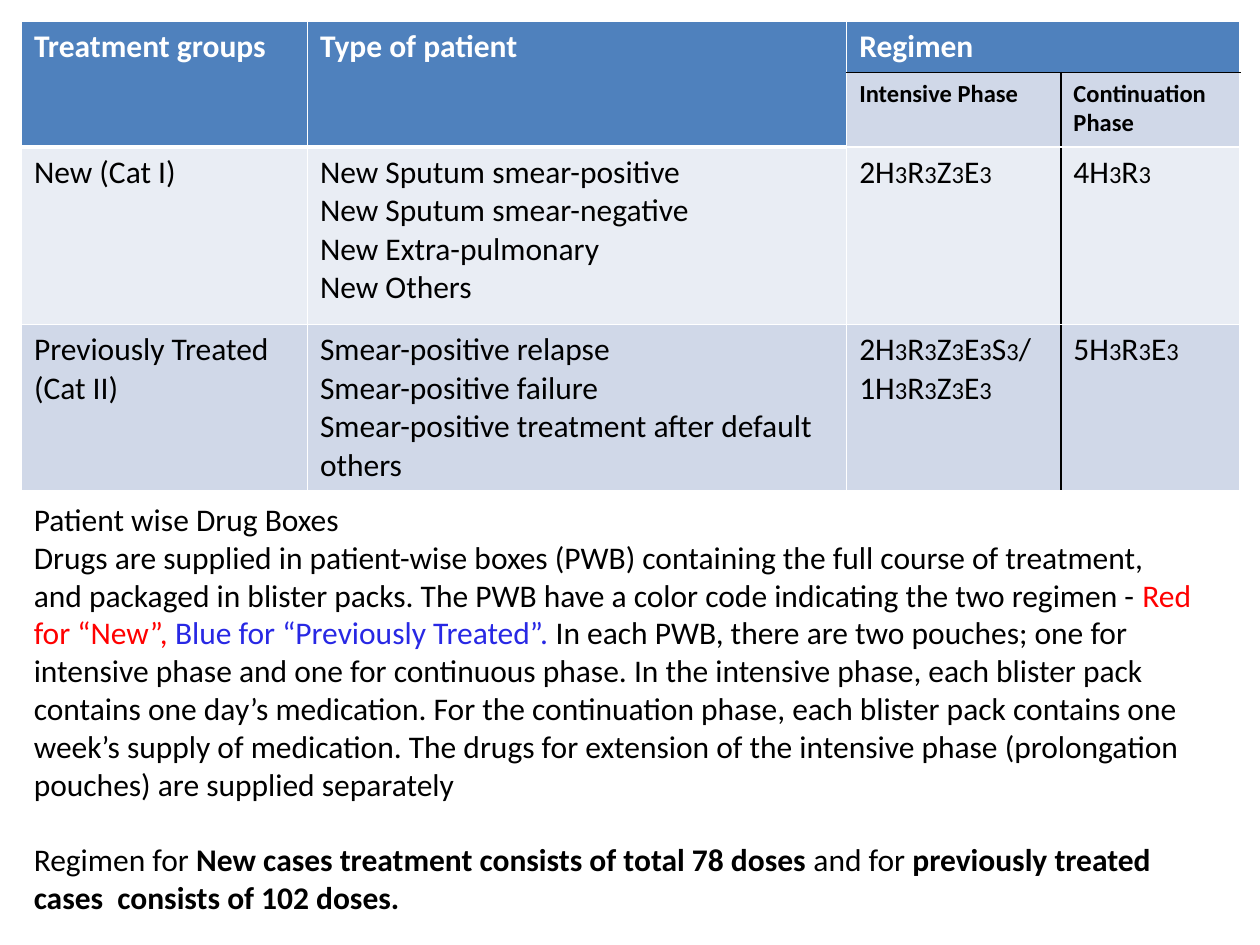
from dataclasses import dataclass
from itertools import groupby

from lxml import etree
from pptx import Presentation
from pptx import util as u
from pptx.dml.color import RGBColor
from pptx.oxml import ns

COLORS = {
    "header": "4F81BD", "band": "D0D8E8", "light": "E9EDF4",
    "white": "FFFFFF", "black": "000000", "red": "FF0000", "blue": "2828E4",
}
FONT = "Calibri"
BODY, SMALL = 18, 14
MARGIN = 0.17
COLUMNS = [2.27, 4.28, 1.70, 1.42]
ROWS = [0.39, 0.59, 1.41, 1.29]


@dataclass
class Entry:
    row: int
    column: int
    lines: list[str]
    fill: str
    color: str = "black"
    size: int = BODY
    bold: bool = False
    row_span: int = 1
    column_span: int = 1
    formula: bool = False


@dataclass
class Span:
    words: str
    color: str = "black"
    bold: bool = False


HEADING = {"fill": "header", "color": "white", "bold": True}
PHASE = {"fill": "band", "size": SMALL, "bold": True}
ENTRIES = [
    Entry(0, 0, ["Treatment groups"], row_span=2, **HEADING),
    Entry(0, 1, ["Type of patient"], row_span=2, **HEADING),
    Entry(0, 2, ["Regimen"], column_span=2, **HEADING),
    Entry(1, 2, ["Intensive Phase"], **PHASE),
    Entry(1, 3, ["Continuation", "Phase"], **PHASE),
    Entry(2, 0, ["New (Cat I)"], "light"),
    Entry(2, 1, ["New Sputum smear-positive", "New Sputum smear-negative",
                 "New Extra-pulmonary", "New Others"], "light"),
    Entry(2, 2, ["2H3R3Z3E3"], "light", formula=True),
    Entry(2, 3, ["4H3R3"], "light", formula=True),
    Entry(3, 0, ["Previously Treated (Cat II)"], "band"),
    Entry(3, 1, ["Smear-positive relapse", "Smear-positive failure",
                 "Smear-positive treatment after default", "others"], "band"),
    Entry(3, 2, ["2H3R3Z3E3S3/", "1H3R3Z3E3"], "band", formula=True),
    Entry(3, 3, ["5H3R3E3"], "band", formula=True),
]
DRUG_BOXES = [
    [Span("Patient wise Drug Boxes")],
    [Span("Drugs are supplied in patient-wise boxes (PWB) containing the full course of treatment,")],
    [Span("and packaged in blister packs. The PWB have a color code indicating the two regimen - "),
     Span("Red", "red")],
    [Span("for “New”, ", "red"), Span("Blue for “Previously Treated”. ", "blue"),
     Span("In each PWB, there are two pouches; one for")],
    [Span("intensive phase and one for continuous phase. In the intensive phase, each blister pack")],
    [Span("contains one day’s medication. For the continuation phase, each blister pack contains one")],
    [Span("week’s supply of medication. The drugs for extension of the intensive phase (prolongation")],
    [Span("pouches) are supplied separately")],
    [Span("Regimen for "), Span("New cases treatment consists of total 78 doses ", bold=True),
     Span("and for "), Span("previously treated cases  consists of 102 doses.", bold=True)],
]


def rgb(name: str) -> RGBColor:
    return RGBColor.from_string(COLORS[name])


def style(font, color: str, size: int, bold: bool) -> None:
    font.name, font.size, font.bold = FONT, u.Pt(size), bold
    font.color.rgb = rgb(color)


def add_formula(paragraph, formula: str, color: str) -> None:
    """Write a drug regimen with its weekly-frequency digits smaller."""
    def is_frequency(item: tuple[int, str]) -> bool:
        return item[0] > 0 and item[1].isdigit()

    for small, part in groupby(enumerate(formula), is_frequency):
        run = paragraph.add_run()
        run.text = "".join(letter for _, letter in part)
        style(run.font, color, SMALL if small else BODY, False)


def edges(row: int, column: int) -> dict[str, tuple[str, int]]:
    """Colour and width of each border: black rules part the two phases."""
    borders = {side: ("white", 1) for side in ("L", "R", "T", "B")}
    if column < 2 and row < 2:
        borders["B"] = ("white", 3)
    if column >= 2 and row < 2:
        borders["B" if row == 0 else "T"] = ("black", 1)
    if column >= 2 and row > 0:
        borders["R" if column == 2 else "L"] = ("black", 1)
    return borders


def draw_borders(cell, row: int, column: int) -> None:
    properties = cell._tc.get_or_add_tcPr()
    for side, (color, width) in edges(row, column).items():
        line = etree.SubElement(properties, ns.qn(f"a:ln{side}"), w=str(u.Pt(width)))
        fill = etree.SubElement(line, ns.qn("a:solidFill"))
        etree.SubElement(fill, ns.qn("a:srgbClr"), val=COLORS[color])


def fill_entry(table, entry: Entry) -> None:
    rows = range(entry.row, entry.row + entry.row_span)
    columns = range(entry.column, entry.column + entry.column_span)
    for row in rows:
        for column in columns:
            cell = table.cell(row, column)
            draw_borders(cell, row, column)
            cell.fill.solid()
            cell.fill.fore_color.rgb = rgb(entry.fill)
    origin = table.cell(entry.row, entry.column)
    if len(rows) * len(columns) > 1:
        origin.merge(table.cell(rows[-1], columns[-1]))
    frame = origin.text_frame
    if not entry.formula:
        frame.text = "\n".join(entry.lines)
        for paragraph in frame.paragraphs:
            style(paragraph.font, entry.color, entry.size, entry.bold)
        return
    for index, formula in enumerate(entry.lines):
        paragraph = frame.add_paragraph() if index else frame.paragraphs[0]
        add_formula(paragraph, formula, entry.color)


def add_regimens(slide) -> None:
    table = slide.shapes.add_table(
        len(ROWS), len(COLUMNS), u.Inches(MARGIN), u.Inches(MARGIN),
        u.Inches(sum(COLUMNS)), u.Inches(sum(ROWS))).table
    for column, width in zip(table.columns, COLUMNS):
        column.width = u.Inches(width)
    for row, height in zip(table.rows, ROWS):
        row.height = u.Inches(height)
    for entry in ENTRIES:
        fill_entry(table, entry)


def add_drug_boxes(slide) -> None:
    frame = slide.shapes.add_textbox(
        u.Inches(MARGIN), u.Inches(3.92), u.Inches(9.5), u.Inches(3.43)).text_frame
    frame.word_wrap = True
    for index, spans in enumerate(DRUG_BOXES):
        paragraph = frame.add_paragraph() if index else frame.paragraphs[0]
        for span in spans:
            run = paragraph.add_run()
            run.text = span.words
            style(run.font, span.color, BODY, span.bold)
    paragraph.space_before = u.Pt(BODY * 1.2)


def main() -> None:
    deck = Presentation()
    deck.slide_width, deck.slide_height = u.Inches(10), u.Inches(7.5)
    slide = deck.slides.add_slide(deck.slide_layouts[6])
    add_regimens(slide)
    add_drug_boxes(slide)
    deck.save("out.pptx")


if __name__ == "__main__":
    main()
